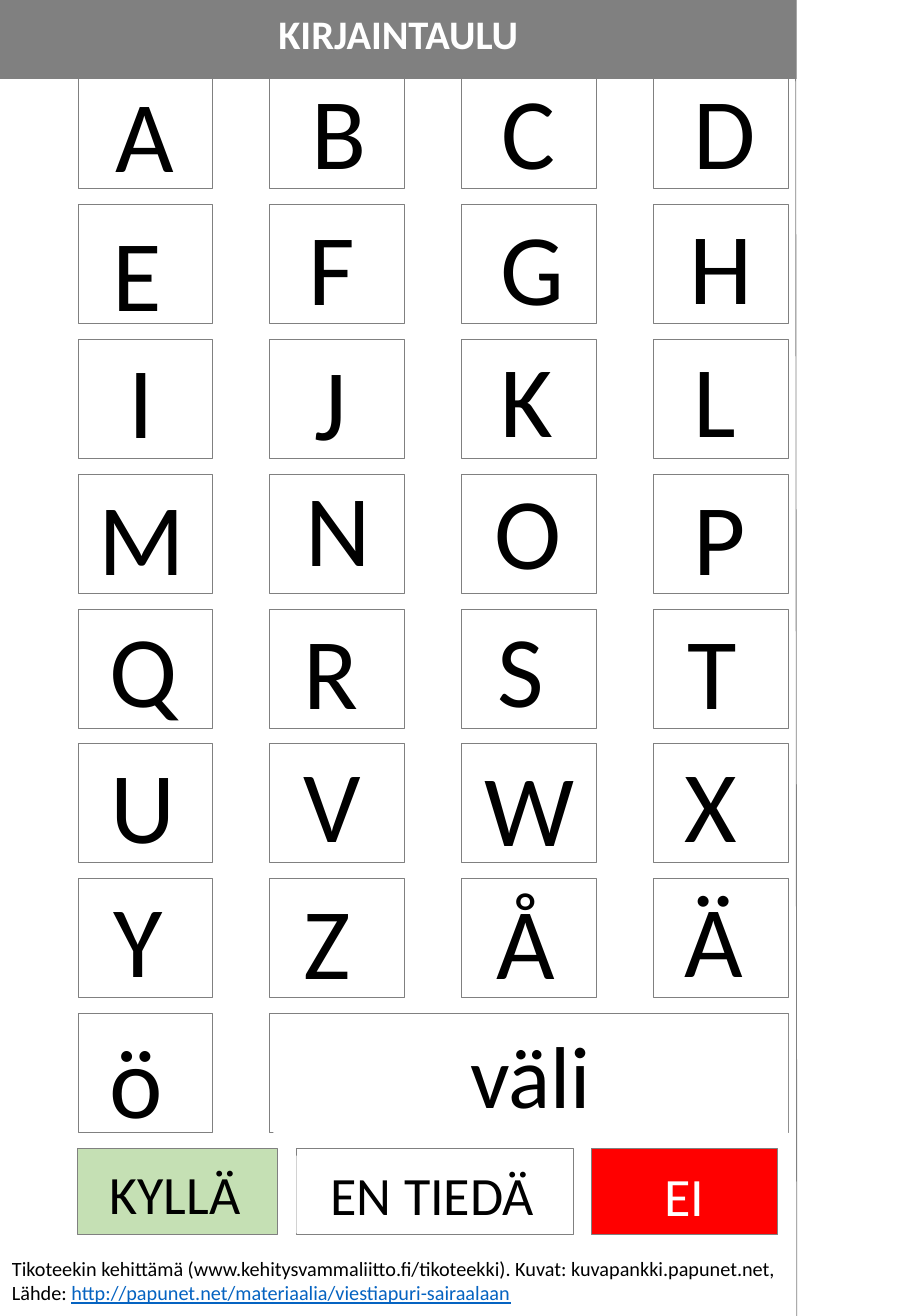
from lxml import etree
from pptx import Presentation
from pptx.dml.color import RGBColor
from pptx.enum.shapes import MSO_CONNECTOR, MSO_SHAPE
from pptx.enum.text import MSO_ANCHOR, PP_ALIGN
from pptx.oxml.ns import qn
from pptx.util import Inches, Pt

RECTANGLE = MSO_SHAPE.RECTANGLE
STRAIGHT = MSO_CONNECTOR.STRAIGHT
TOP = MSO_ANCHOR.TOP
LEFT, CENTER = PP_ALIGN.LEFT, PP_ALIGN.CENTER

BLACK = RGBColor(0x00, 0x00, 0x00)
WHITE = RGBColor(0xFF, 0xFF, 0xFF)
GRAY = RGBColor(0x80, 0x80, 0x80)
GREEN = RGBColor(0xC5, 0xE0, 0xB4)
RED = RGBColor(0xFF, 0x00, 0x00)
LINK_BLUE = RGBColor(0x05, 0x63, 0xC1)

FONT = "Calibri"
BOARD_WIDTH = 6.56
GRID_LEFT, GRID_TOP = 0.64, 0.57
COLUMN_STEP, ROW_STEP = 1.58, 1.11
CELL_WIDTH, CELL_HEIGHT = 1.11, 0.98

# Each letter with the offset of its text box from the corner of its cell
LETTER_ROWS = [
    [("A", 0.21, -0.03), ("B", 0.25, -0.06), ("C", 0.23, -0.06), ("D", 0.23, -0.06)],
    [("E", 0.19, 0), ("F", 0.22, -0.05), ("G", 0.22, -0.05), ("H", 0.2, -0.06)],
    [("I", 0.32, -0.06), ("J", 0.27, -0.05), ("K", 0.22, -0.07), ("L", 0.23, -0.07)],
    [("M", 0.07, -0.05), ("N", 0.2, -0.12), ("O", 0.17, -0.1), ("P", 0.23, -0.05)],
    [("Q", 0.16, -0.07), ("R", 0.18, -0.05), ("S", 0.2, -0.07), ("T", 0.18, -0.05)],
    [("U", 0.17, -0.06), ("V", 0.18, -0.07), ("W", 0.09, -0.04), ("X", 0.16, -0.07)],
    [("Y", 0.2, -0.07), ("Z", 0.18, -0.05), ("Å", 0.19, -0.05), ("Ä", 0.16, -0.07)],
    [("ö", 0.16, -0.02)],
]


def add_run(paragraph, text, size, color=BLACK, bold=False, underline=False):
    run = paragraph.add_run()
    run.text = text
    run.font.name = FONT
    run.font.size = Pt(size)
    run.font.color.rgb = color
    run.font.bold = bold
    run.font.underline = underline


def write(shape, text, align=CENTER, **run_format):
    """Put one formatted run at the top of a shape and return its paragraph."""
    frame = shape.text_frame
    frame.word_wrap = True
    frame.vertical_anchor = TOP
    paragraph = frame.paragraphs[0]
    paragraph.alignment = align
    add_run(paragraph, text, **run_format)
    return paragraph


def add_rectangle(slide, left, top, width, height, fill=None, outlined=True):
    rectangle = slide.shapes.add_shape(
        RECTANGLE, Inches(left), Inches(top), Inches(width), Inches(height))
    rectangle.shadow.inherit = False
    if fill is None:
        rectangle.fill.background()
    else:
        rectangle.fill.solid()
        rectangle.fill.fore_color.rgb = fill
    if outlined:
        rectangle.line.color.rgb = GRAY
        rectangle.line.width = Pt(0.25)
    else:
        rectangle.line.fill.background()
    return rectangle


def add_label(slide, text, left, top, width, height, **text_format):
    label = slide.shapes.add_textbox(
        Inches(left), Inches(top), Inches(width), Inches(height))
    return write(label, text, **text_format)


def add_source(slide):
    credit = add_label(
        slide,
        "Tikoteekin kehittämä (www.kehitysvammaliitto.fi/tikoteekki). "
        "Kuvat: kuvapankki.papunet.net, Lähde: ",
        0, 10.29, 6.59, 0.5, align=LEFT, size=12)
    add_run(credit, "http://papunet.net/materiaalia/viestiapuri-sairaalaan",
            size=12, color=LINK_BLUE, underline=True)


def add_answers(slide):
    top, height = 9.45, 0.71
    add_rectangle(slide, 4.87, top, 1.53, height, RED)
    add_label(slide, "EI", 4.89, 9.52, 1.49, 0.64, size=32, color=WHITE)
    add_rectangle(slide, 2.44, top, 2.28, height)
    unsure = add_rectangle(slide, 2.44, 9.51, 2.24, 0.64, WHITE, outlined=False)
    write(unsure, "EN TIEDÄ", size=32)
    add_rectangle(slide, GRID_LEFT, top, 1.64, height, GREEN)
    add_label(slide, "KYLLÄ", 0.65, 9.5, 1.58, 0.64, size=32)


def add_space_key(slide):
    add_rectangle(slide, 2.22, 8.34, 4.27, CELL_HEIGHT)
    space_key = add_rectangle(slide, 2.25, 8.35, 4.24, CELL_HEIGHT, WHITE, outlined=False)
    write(space_key, "väli", size=52)


def add_letters(slide):
    for row, letters in enumerate(LETTER_ROWS):
        top = GRID_TOP + row * ROW_STEP
        for column, (letter, shift_x, shift_y) in enumerate(letters):
            left = GRID_LEFT + column * COLUMN_STEP
            add_rectangle(slide, left, top, CELL_WIDTH, CELL_HEIGHT, WHITE)
            add_label(slide, letter, left + shift_x, top + shift_y, 0.77, 1.11,
                      align=LEFT, size=60)


def add_board_edge(slide):
    edge = slide.shapes.add_connector(
        STRAIGHT, Inches(6.55), Inches(0), Inches(BOARD_WIDTH), Inches(10.83))
    edge.line.color.rgb = GRAY
    edge.line.width = Pt(0.5)
    etree.SubElement(edge._element.spPr, qn("a:effectLst"))


def add_title(slide):
    banner = add_rectangle(slide, 0, 0, BOARD_WIDTH, 0.65, GRAY, outlined=False)
    banner.text_frame.margin_top = Inches(0.07)
    write(banner, "KIRJAINTAULU", size=24, color=WHITE, bold=True)


def main():
    presentation = Presentation()
    presentation.slide_width = Inches(7.5)
    presentation.slide_height = Inches(10.83)
    slide = presentation.slides.add_slide(presentation.slide_layouts[6])
    add_source(slide)
    add_answers(slide)
    add_space_key(slide)
    add_letters(slide)
    add_board_edge(slide)
    add_title(slide)
    presentation.save("out.pptx")


if __name__ == "__main__":
    main()
